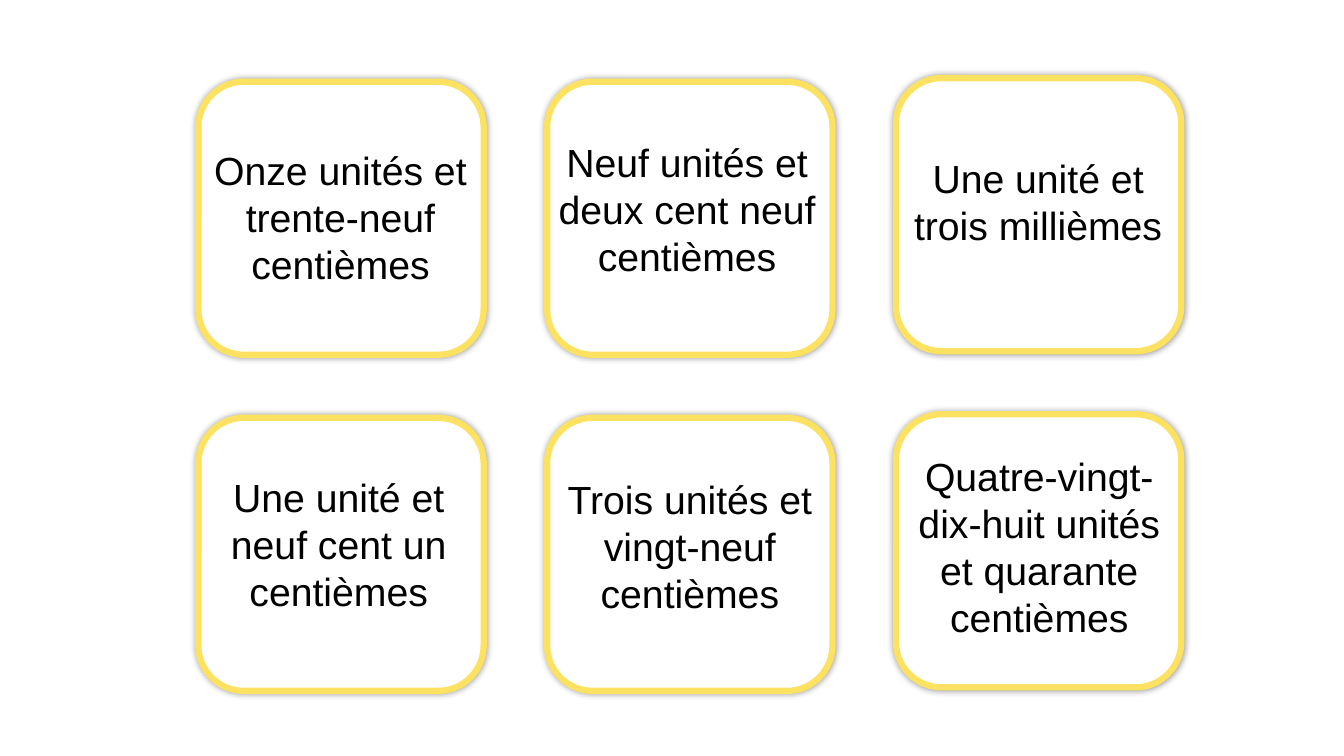
import pptx
import pptx.util
import pptx.dml.color
import pptx.enum.shapes
import pptx.enum.text
import pptx.oxml.ns
import lxml.etree

Cm = pptx.util.Cm
Pt = pptx.util.Pt
RGB = pptx.dml.color.RGBColor.from_string
qn = pptx.oxml.ns.qn

COLORS = {"card": "FFFFFF", "edge": "FDE261", "text": "000000", "shade": "000000"}

LABELS = [
    ("Onze unités et trente-neuf centièmes", 4.95, 3.56, 7.26, 3),
    ("Neuf unités et deux cent neuf centièmes", 13.72, 3.35, 7.19, 3),
    ("Une unité et trois millièmes", 22.53, 3.76, 7.26, 2),
    ("Une unité et neuf cent un centièmes", 4.85, 11.81, 7.37, 3),
    ("Trois unités et vingt-neuf centièmes", 13.51, 11.86, 7.75, 3),
    ("Quatre-vingt-dix-huit unités et quarante centièmes", 22.56, 11.28, 7.26, 4),
]

deck = pptx.Presentation()
deck.slide_width = Cm(33.87)
deck.slide_height = Cm(19.05)
slide = deck.slides.add_slide(deck.slide_layouts[6])

for row in range(2):
    for col, lift in enumerate((0, 0, 0.09)):
        card = slide.shapes.add_shape(
            pptx.enum.shapes.MSO_SHAPE.ROUNDED_RECTANGLE,
            Cm(5 + col * 8.79), Cm(2.06 + row * 8.47 - lift), Cm(7.19), Cm(6.88))
        card.fill.solid()
        card.fill.fore_color.rgb = RGB(COLORS["card"])
        card.line.color.rgb = RGB(COLORS["edge"])
        card.line.width = Pt(4.5)
        card.shadow.inherit = False
        effects = card._element.spPr.find(qn("a:effectLst"))
        shade = lxml.etree.SubElement(
            effects, qn("a:outerShdw"), blurRad=str(Pt(5)), dist="0", dir="0",
            algn="ctr", rotWithShape="0")
        color = lxml.etree.SubElement(shade, qn("a:srgbClr"), val=COLORS["shade"])
        lxml.etree.SubElement(color, qn("a:alpha"), val="40000")

for words, left, top, width, lines in LABELS:
    box = slide.shapes.add_textbox(
        Cm(left), Cm(top), Cm(width), Cm(0.24 + lines * 1.2))
    frame = box.text_frame
    frame.word_wrap = True
    frame.auto_size = pptx.enum.text.MSO_AUTO_SIZE.SHAPE_TO_FIT_TEXT
    para = frame.paragraphs[0]
    para.alignment = pptx.enum.text.PP_ALIGN.CENTER
    run = para.add_run()
    run.text = words
    run.font.name = "Arial"
    run.font.size = Pt(28)
    run.font.color.rgb = RGB(COLORS["text"])

deck.save("out.pptx")
